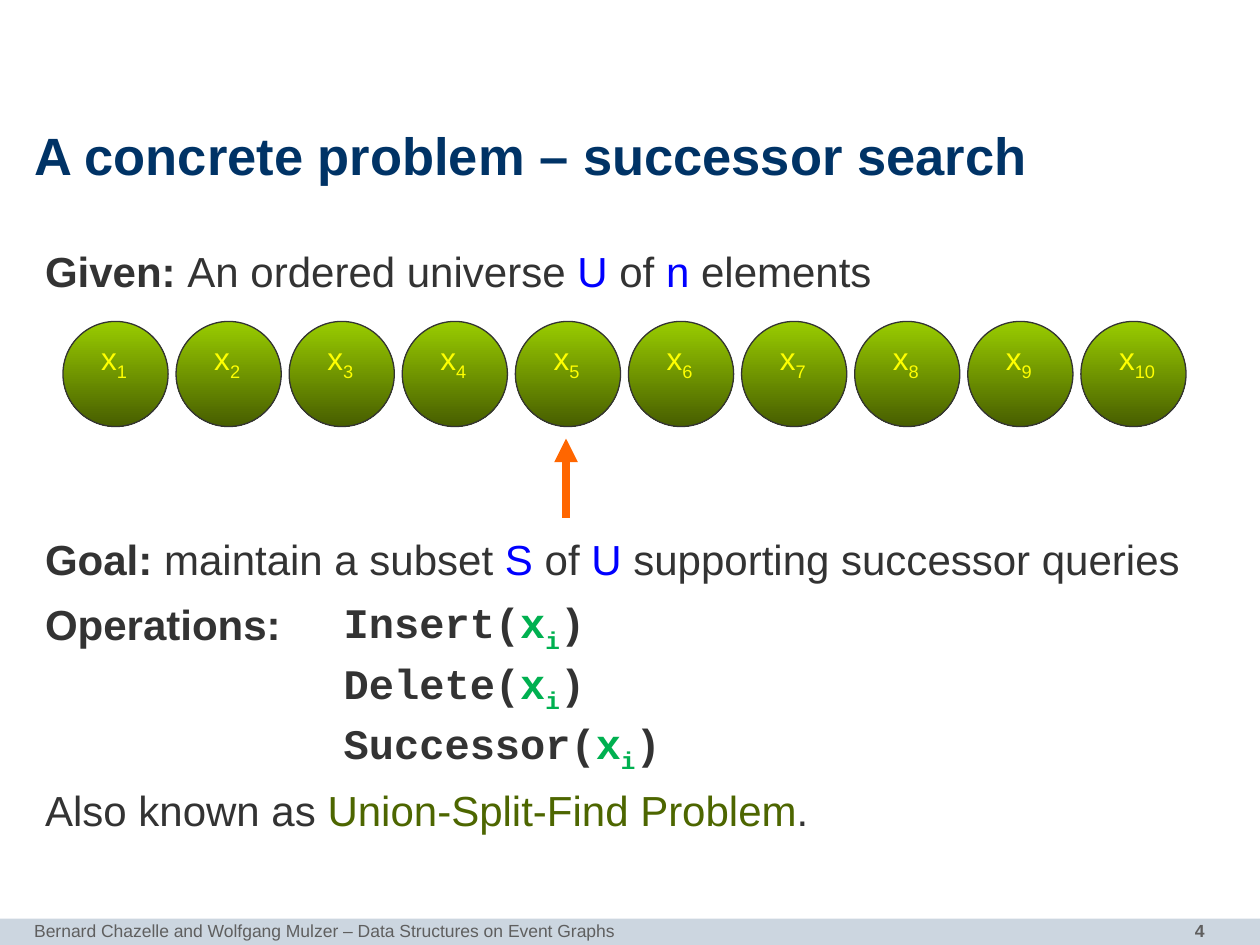
"""Build the slide on successor search over an ordered universe."""
from lxml import etree
from pptx import Presentation
from pptx.dml.color import RGBColor
from pptx.enum.dml import MSO_FILL
from pptx.enum.shapes import MSO_CONNECTOR, MSO_SHAPE
from pptx.enum.text import MSO_ANCHOR, MSO_AUTO_SIZE, PP_ALIGN
from pptx.oxml.ns import qn
from pptx.util import Cm, Pt

LINE = MSO_CONNECTOR.STRAIGHT
OVAL, RECT = MSO_SHAPE.OVAL, MSO_SHAPE.RECTANGLE
MIDDLE, FIXED = MSO_ANCHOR.MIDDLE, MSO_AUTO_SIZE.NONE
LEFT, RIGHT = PP_ALIGN.LEFT, PP_ALIGN.RIGHT
GRADIENT = MSO_FILL.GRADIENT

COLOR = {
    "title": "003366", "text": "333333", "set": "0000FF", "item": "00B050",
    "name": "4D6600", "label": "FFFF00", "top": "99CC00", "base": "475E00",
    "arrow": "FF6600", "bar": "CCD6E0", "foot": "5F5F5F",
}
TITLE = "A concrete problem – successor search"
FOOT = "Bernard Chazelle and Wolfgang Mulzer – Data Structures on Event Graphs"
PAGE = "4"
LINES = [
    (4.83, 21.0, [("Given: ", "bold"), ("An ordered universe ", ""), ("U", "set"),
                  (" of ", ""), ("n", "set"), (" elements", "")]),
    (10.64, 23.5, [("Goal:", "bold"), (" maintain a subset ", ""), ("S", "set"),
                   (" of ", ""), ("U", "set"), (" supporting successor queries", "")]),
    (11.94, 5.46, [("Operations:", "bold")]),
    (15.7, 16.79, [("Also known as ", ""), ("Union-Split-Find Problem", "name"),
                   (".", "")]),
]
CALLS = ["Insert", "Delete", "Successor"]
COUNT, START, PITCH, SIZE, ROW = 10, 1.27, 2.28, 2.12, 6.48


def rgb(key):
    return RGBColor.from_string(COLOR[key])


def style(para, size, color, face="Arial", bold=False):
    font = para.font
    font.name, font.size, font.bold = face, Pt(size), bold
    font.color.rgb = rgb(color)


def add_text(slide, box, runs, size=24, color="text", face="Arial",
             bold=False, align=LEFT, inset=0.25):
    frame = slide.shapes.add_textbox(*map(Cm, box)).text_frame
    frame.word_wrap = True
    frame.margin_left = frame.margin_right = Cm(inset)
    para = frame.paragraphs[0]
    para.alignment = align
    style(para, size, color, face, bold)
    for text, marks in runs:
        run = para.add_run()
        run.text = text
        for mark in marks.split():
            if mark == "bold":
                run.font.bold = True
            elif mark == "sub":
                run.font._element.set("baseline", "-25000")
            else:
                run.font.color.rgb = rgb(mark)


def add_ball(slide, num):
    left = START + (num - 1) * PITCH
    ball = slide.shapes.add_shape(OVAL, Cm(left), Cm(ROW), Cm(SIZE), Cm(SIZE))
    ball.shadow.inherit = False
    fill = ball.fill
    fill.gradient()
    if fill.type == GRADIENT:
        fill.gradient_angle = 270
        for stop, key, spot in zip(fill.gradient_stops, ("top", "base"), (0, 1)):
            stop.color.rgb, stop.position = rgb(key), spot
    ball.line.color.rgb, ball.line.width = rgb("text"), Pt(0.75)
    wide = 1.27 if num < 10 else 1.6
    add_text(slide, (left + 0.52, 6.71, wide, 1.27),
             [("x", ""), (str(num), "sub")], 18, "label")


def add_arrow(slide):
    arrow = slide.shapes.add_connector(LINE, Cm(11.41), Cm(10.44), Cm(11.41), Cm(8.84))
    arrow.line.color.rgb, arrow.line.width = rgb("arrow"), Pt(4.5)
    etree.SubElement(arrow.line._get_or_add_ln(), qn("a:tailEnd"), type="triangle")
    etree.SubElement(arrow._element.spPr, qn("a:effectLst"))


def add_title(slide):
    title = slide.shapes.title
    title.left, title.top, title.width, title.height = map(Cm, (0.69, 2.62, 24, 1.19))
    frame = title.text_frame
    frame.text = TITLE
    frame.auto_size, frame.vertical_anchor = FIXED, MIDDLE
    frame.margin_left = frame.margin_right = frame.margin_top = frame.margin_bottom = 0
    para = frame.paragraphs[0]
    para.alignment, para.line_spacing = LEFT, 0.85
    style(para, 30, "title", bold=True)


def add_foot(slide):
    bar = slide.shapes.add_shape(RECT, 0, Cm(18.52), Cm(25.4), Cm(0.53))
    bar.shadow.inherit = False
    bar.fill.solid()
    bar.fill.fore_color.rgb = rgb("bar")
    bar.line.fill.background()
    add_text(slide, (21.13, 18.42, 3.4, 0.66), [(PAGE, "")], 10, "foot",
             bold=True, align=RIGHT)
    add_text(slide, (0.69, 18.42, 17.45, 0.63), [(FOOT, "")], 10, "foot", inset=0)


def main():
    deck = Presentation()
    deck.slide_width, deck.slide_height = Cm(25.4), Cm(19.05)
    slide = deck.slides.add_slide(deck.slide_layouts[5])
    add_foot(slide)
    add_title(slide)
    for num in range(1, COUNT + 1):
        add_ball(slide, num)
    add_arrow(slide)
    for top, width, runs in LINES:
        add_text(slide, (0.66, top, width, 1.27), runs)
    for step, call in enumerate(CALLS):
        runs = [(call + "(", ""), ("x", "item"), ("i", "item sub"), (")", "")]
        add_text(slide, (6.68, 11.91 + step * 1.21, 7.24, 1.27), runs,
                 face="Courier New", bold=True)
    deck.save("out.pptx")


if __name__ == "__main__":
    main()
